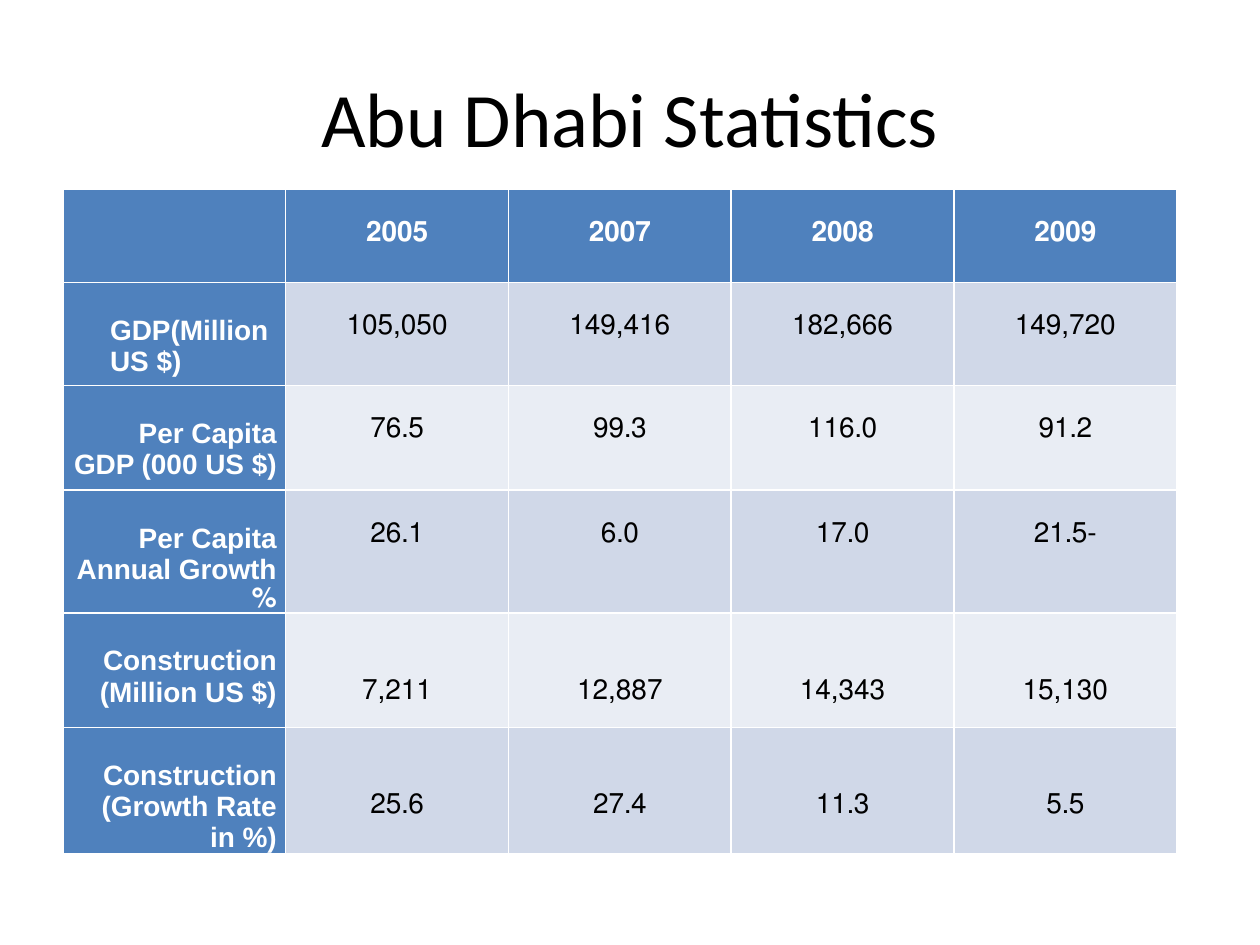
import pptx
import pptx.util
import pptx.dml.color
import pptx.enum.text
from pptx.util import Cm

TITLE = "Abu Dhabi Statistics"
YEARS = ["", "2005", "2007", "2008", "2009"]
STATISTICS = [
    ["GDP(Million\nUS $)", "105,050", "149,416", "182,666", "149,720"],
    ["Per Capita GDP (000 US $)", "76.5", "99.3", "116.0", "91.2"],
    ["Per Capita Annual Growth %", "26.1", "6.0", "17.0", "-21.5"],
    ["Construction (Million US $)", "7,211", "12,887", "14,343", "15,130"],
    ["Construction (Growth Rate in %)", "25.6", "27.4", "11.3", "5.5"],
]
COLORS = {
    "header": "4F81BD",
    "odd": "D0D8E8",
    "even": "E9EDF4",
    "light": "FFFFFF",
    "dark": "000000",
}
ROW_HEIGHTS = [1.88, 2.08, 2.11, 2.18, 2.31, 2.26]
COLUMN_WIDTH = 4.49
SIDE_MARGIN = 0.18
LABEL_TOP = 0.66
VALUE_TOP = 0.61
LOW_VALUE_TOP = 1.29
FIRST_LOW_ROW = 4
ALIGN = pptx.enum.text.PP_ALIGN


def rgb(name):
    return pptx.dml.color.RGBColor.from_string(COLORS[name])


def write(frame, text, size=16, font="Arial", color="dark", bold=False,
          align=ALIGN.CENTER, rtl=True):
    frame.text = text
    for para in frame.paragraphs:
        para.alignment = align
        if rtl:
            para._p.get_or_add_pPr().set("rtl", "1")
        for span in para.runs:
            span.font.size = pptx.util.Pt(size)
            span.font.name = font
            span.font.bold = bold
            span.font.color.rgb = rgb(color)


def fill_cell(cell, text, row, column):
    is_label = row > 0 and column == 0
    is_heading = row == 0 or column == 0
    is_indented = "\n" in text
    top = VALUE_TOP
    if is_label:
        top = LABEL_TOP
    elif row >= FIRST_LOW_ROW:
        top = LOW_VALUE_TOP
    cell.margin_left = Cm(0.95 if is_indented else SIDE_MARGIN)
    cell.margin_right = Cm(SIDE_MARGIN)
    cell.margin_top = Cm(top)
    cell.margin_bottom = Cm(0)
    cell.fill.solid()
    band = "odd" if row % 2 else "even"
    cell.fill.fore_color.rgb = rgb("header" if is_heading else band)
    align = ALIGN.CENTER
    if is_label:
        align = ALIGN.LEFT if is_indented else ALIGN.RIGHT
    write(cell.text_frame, text, color="light" if is_heading else "dark",
          bold=is_heading, align=align, rtl=not is_indented)


def add_statistics(page):
    rows = [YEARS] + STATISTICS
    table = page.shapes.add_table(
        len(rows), len(YEARS), Cm(1.27), Cm(3.81),
        Cm(COLUMN_WIDTH * len(YEARS)), Cm(sum(ROW_HEIGHTS))).table
    table.first_col = True
    for column in table.columns:
        column.width = Cm(COLUMN_WIDTH)
    for row, (height, texts) in enumerate(zip(ROW_HEIGHTS, rows)):
        table.rows[row].height = Cm(height)
        for column, text in enumerate(texts):
            fill_cell(table.cell(row, column), text, row, column)


def main():
    deck = pptx.Presentation()
    deck.slide_width, deck.slide_height = Cm(25.4), Cm(19.05)
    page = deck.slides.add_slide(deck.slide_layouts[5])
    title = page.shapes.title
    title.left, title.top = Cm(1.27), Cm(0.76)
    title.width, title.height = Cm(22.86), Cm(3.18)
    title.text_frame.vertical_anchor = pptx.enum.text.MSO_ANCHOR.MIDDLE
    write(title.text_frame, TITLE, size=44, font="Calibri")
    add_statistics(page)
    deck.save("out.pptx")


if __name__ == "__main__":
    main()
